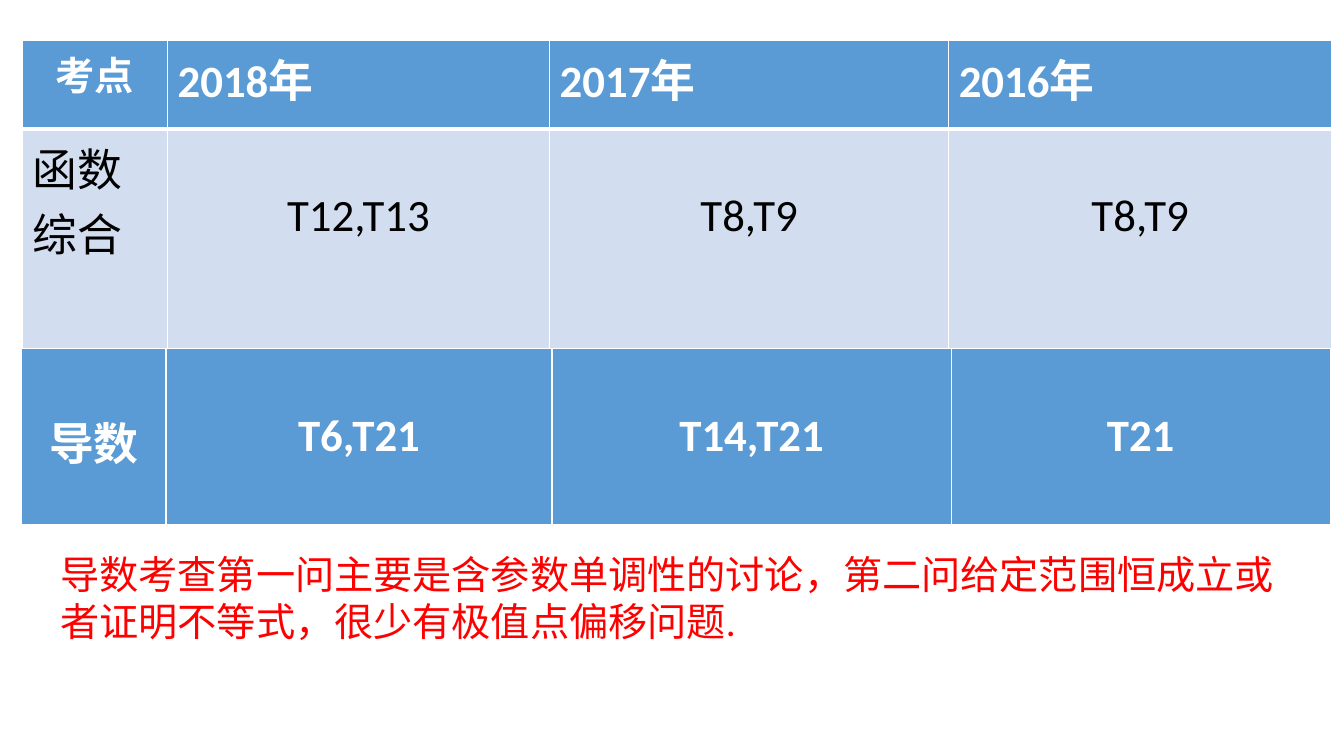
from lxml import etree
from pptx import Presentation
from pptx.dml.color import RGBColor
from pptx.enum.text import PP_ALIGN
from pptx.oxml.ns import qn
from pptx.util import Pt

LEFT, CENTER = PP_ALIGN.LEFT, PP_ALIGN.CENTER
WHITE = RGBColor(0xFF, 0xFF, 0xFF)
BLACK = RGBColor(0, 0, 0)
RED = RGBColor(0xFF, 0, 0)
BLUE = RGBColor(0x5B, 0x9B, 0xD5)
PALE = RGBColor(0xD2, 0xDE, 0xEF)
FONT = "Calibri"
PAD, LOWERED = 3.6, 42.6


def set_font(p, size, color, bold=False):
    p.font.name = FONT
    p.font.size = Pt(size)
    p.font.bold = bold
    p.font.color.rgb = color


def set_borders(cell, top, bottom):
    tc_pr = cell._tc.get_or_add_tcPr()
    widths = {"a:lnL": 1, "a:lnR": 1, "a:lnT": top, "a:lnB": bottom}
    for i, (tag, width) in enumerate(widths.items()):
        ln = etree.Element(qn(tag), w=str(Pt(width)))
        fill = etree.SubElement(ln, qn("a:solidFill"))
        etree.SubElement(fill, qn("a:srgbClr"), val=str(WHITE))
        tc_pr.insert(i, ln)


def fill_cell(cell, text, fill, color, bold, align, size=32, top_pad=PAD):
    cell.fill.solid()
    cell.fill.fore_color.rgb = fill
    cell.margin_top = Pt(top_pad)
    p = cell.text_frame.paragraphs[0]
    p.text = text
    p.alignment = align
    set_font(p, size, color, bold)


def add_grid(s, left, top, widths, heights):
    table = s.shapes.add_table(len(heights), len(widths), Pt(left), Pt(top),
                               Pt(sum(widths)), Pt(sum(heights))).table
    table.horz_banding = False
    for column, width in zip(table.columns, widths):
        column.width = Pt(width)
    for row, height in zip(table.rows, heights):
        row.height = Pt(height)
    return table


def add_function_table(s, left, top):
    table = add_grid(s, left, top, [103.7, 272.9, 285.1, 273.6], [63.4, 156.9])
    headings = ["考点", "2018年", "2017年", "2016年"]
    questions = ["函数综合", "T12,T13", "T8,T9", "T8,T9"]
    for i, (heading, question) in enumerate(zip(headings, questions)):
        first = i == 0
        head, body = table.cell(0, i), table.cell(1, i)
        fill_cell(head, heading, BLUE, WHITE, True,
                  CENTER if first else LEFT, 28 if first else 32)
        fill_cell(body, question, PALE, BLACK, False,
                  LEFT if first else CENTER, top_pad=PAD if first else LOWERED)
        set_borders(head, 1, 3)
        set_borders(body, 3, 1)


def add_derivative_table(s, left, top):
    table = add_grid(s, left, top, [103, 275.8, 285.1, 270.7], [126.7])
    for i, text in enumerate(["导数", "T6,T21", "T14,T21", "T21"]):
        cell = table.cell(0, i)
        fill_cell(cell, text, BLUE, WHITE, True, CENTER, top_pad=LOWERED)
        set_borders(cell, 1, 3)


def add_remark(s, left, top, width, height):
    tf = s.shapes.add_textbox(Pt(left), Pt(top), Pt(width), Pt(height)).text_frame
    tf.word_wrap = True
    p = tf.paragraphs[0]
    p.text = ("导数考查第一问主要是含参数单调性的讨论，"
              "第二问给定范围恒成立或者证明不等式，很少有极值点偏移问题.")
    set_font(p, 28, RED)


def main():
    prs = Presentation()
    prs.slide_width, prs.slide_height = Pt(960), Pt(540)
    s = prs.slides.add_slide(prs.slide_layouts[6])
    add_function_table(s, 16, 28.8)
    add_remark(s, 36, 389.5, 893, 75)
    add_derivative_table(s, 15.6, 249.1)
    prs.save("out.pptx")


if __name__ == "__main__":
    main()
